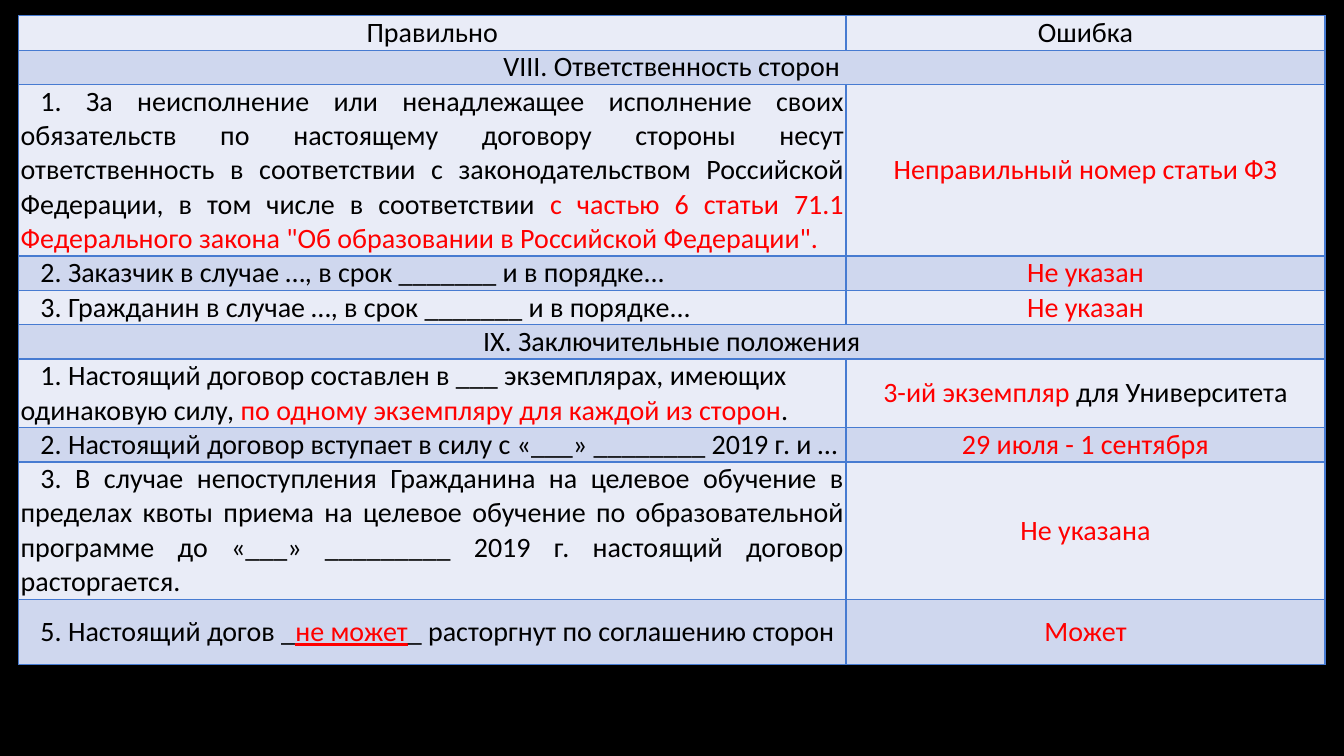
from dataclasses import dataclass

from pptx import Presentation
from pptx.dml.color import RGBColor
from pptx.enum.text import MSO_ANCHOR as Anchor, PP_ALIGN as Align
from pptx.oxml import parse_xml
from pptx.oxml.ns import nsdecls
from pptx.table import Table, _Cell as Cell
from pptx.util import Cm, Pt

BLACK = RGBColor(0x00, 0x00, 0x00)
RED = RGBColor(0xFF, 0x00, 0x00)
BORDER = RGBColor(0x47, 0x7B, 0xD1)
BANDS = (RGBColor(0xE9, 0xEC, 0xF7), RGBColor(0xCF, 0xD7, 0xEE))

LINE_HEIGHT = 0.86
COLUMN_WIDTHS = (20.85, 12.07)
FONT_FORMAT = {"name": "Calibri", "size": Pt(20), "bold": False}
CELL_FORMAT = {
    "margin_left": Cm(0.05),
    "margin_right": Cm(0.05),
    "margin_top": 0,
    "margin_bottom": 0,
    "vertical_anchor": Anchor.MIDDLE,
}


@dataclass(frozen=True)
class Run:
    text: str
    color: RGBColor = BLACK
    underline: bool = False


@dataclass(frozen=True)
class Row:
    clause: tuple[Run, ...]
    mistake: tuple[Run, ...] = ()
    align: Align = Align.LEFT
    lines: float = 1


def heading(text: str) -> tuple[Run, ...]:
    return (Run(text),)


def error(text: str) -> tuple[Run, ...]:
    return (Run(text, RED),)


ROWS = (
    Row(heading("Правильно"), heading("Ошибка"), Align.CENTER),
    Row(heading("VIII. Ответственность сторон"), align=Align.CENTER),
    Row(
        (
            Run("1. За неисполнение или ненадлежащее исполнение своих обязательств "
                "по настоящему договору стороны несут ответственность в соответствии "
                "с законодательством Российской Федерации, в том числе в соответствии "),
            Run("с частью 6 статьи 71.1 Федерального закона "
                "\"Об образовании в Российской Федерации\".", RED),
        ),
        error("Неправильный номер статьи ФЗ"), Align.JUSTIFY, 5,
    ),
    Row((Run("2. Заказчик в случае …, в срок _______ и в порядке..."),), error("Не указан")),
    Row((Run("3. Гражданин в случае …, в срок _______ и в порядке..."),), error("Не указан")),
    Row(heading("IX. Заключительные положения"), align=Align.CENTER),
    Row(
        (
            Run("1. Настоящий договор составлен в ___ экземплярах, "
                "имеющих одинаковую силу, "),
            Run("по одному экземпляру для каждой из сторон", RED),
            Run("."),
        ),
        (Run("3-ий экземпляр", RED), Run(" для Университета")), lines=2,
    ),
    Row(
        (Run("2. Настоящий договор вступает в силу с «___» ________ 2019 г. и …"),),
        error("29 июля - 1 сентября"),
    ),
    Row(
        (Run("3. В случае непоступления Гражданина на целевое обучение в пределах "
             "квоты приема на целевое обучение по образовательной программе "
             "до «___» _________ 2019 г. настоящий договор расторгается."),),
        error("Не указана"), Align.JUSTIFY, 4,
    ),
    Row(
        (
            Run("5. Настоящий догов _"),
            Run("не может", RED, True),
            Run("_ расторгнут по соглашению сторон"),
        ),
        error("Может"), Align.JUSTIFY, 1.92,
    ),
)


def style_cell(cell: Cell, fill: RGBColor) -> None:
    for name, value in CELL_FORMAT.items():
        setattr(cell, name, value)
    cell.fill.solid()
    cell.fill.fore_color.rgb = fill
    tc_pr = cell._tc.get_or_add_tcPr()
    for position, side in enumerate(("lnL", "lnR", "lnT", "lnB")):
        tc_pr.insert(position, parse_xml(
            f'<a:{side} {nsdecls("a")} w="{Pt(1)}"><a:solidFill>'
            f'<a:srgbClr val="{BORDER}"/></a:solidFill></a:{side}>'
        ))


def write_cell(cell: Cell, runs: tuple[Run, ...], align: Align) -> None:
    p = cell.text_frame.paragraphs[0]
    p.alignment = align
    if align != Align.CENTER:
        p._p.get_or_add_pPr().set("indent", str(Cm(0.5)))
    for run in runs:
        r = p.add_run()
        r.text = run.text
        for name, value in FONT_FORMAT.items():
            setattr(r.font, name, value)
        r.font.color.rgb = run.color
        r.font.underline = run.underline


def fill_row(table: Table, index: int, row: Row) -> None:
    table.rows[index].height = Cm(row.lines * LINE_HEIGHT)
    clause, mistake = table.cell(index, 0), table.cell(index, 1)
    for cell in (clause, mistake):
        style_cell(cell, BANDS[index % 2])
    write_cell(clause, row.clause, row.align)
    if row.mistake:
        write_cell(mistake, row.mistake, Align.CENTER)
    else:
        clause.merge(mistake)


def main() -> None:
    """Build the slide with the table of contract clauses and mistakes."""
    prs = Presentation()
    prs.slide_width, prs.slide_height = Cm(33.87), Cm(19.05)
    s = prs.slides.add_slide(prs.slide_layouts[6])
    s.background.fill.solid()
    s.background.fill.fore_color.rgb = BLACK
    height = sum(row.lines for row in ROWS) * LINE_HEIGHT
    table = s.shapes.add_table(
        len(ROWS), len(COLUMN_WIDTHS),
        Cm(0.47), Cm(0.4), Cm(sum(COLUMN_WIDTHS)), Cm(height),
    ).table
    table.first_row = table.horz_banding = False
    for column, width in zip(table.columns, COLUMN_WIDTHS):
        column.width = Cm(width)
    for index, row in enumerate(ROWS):
        fill_row(table, index, row)
    prs.save("out.pptx")


if __name__ == "__main__":
    main()
